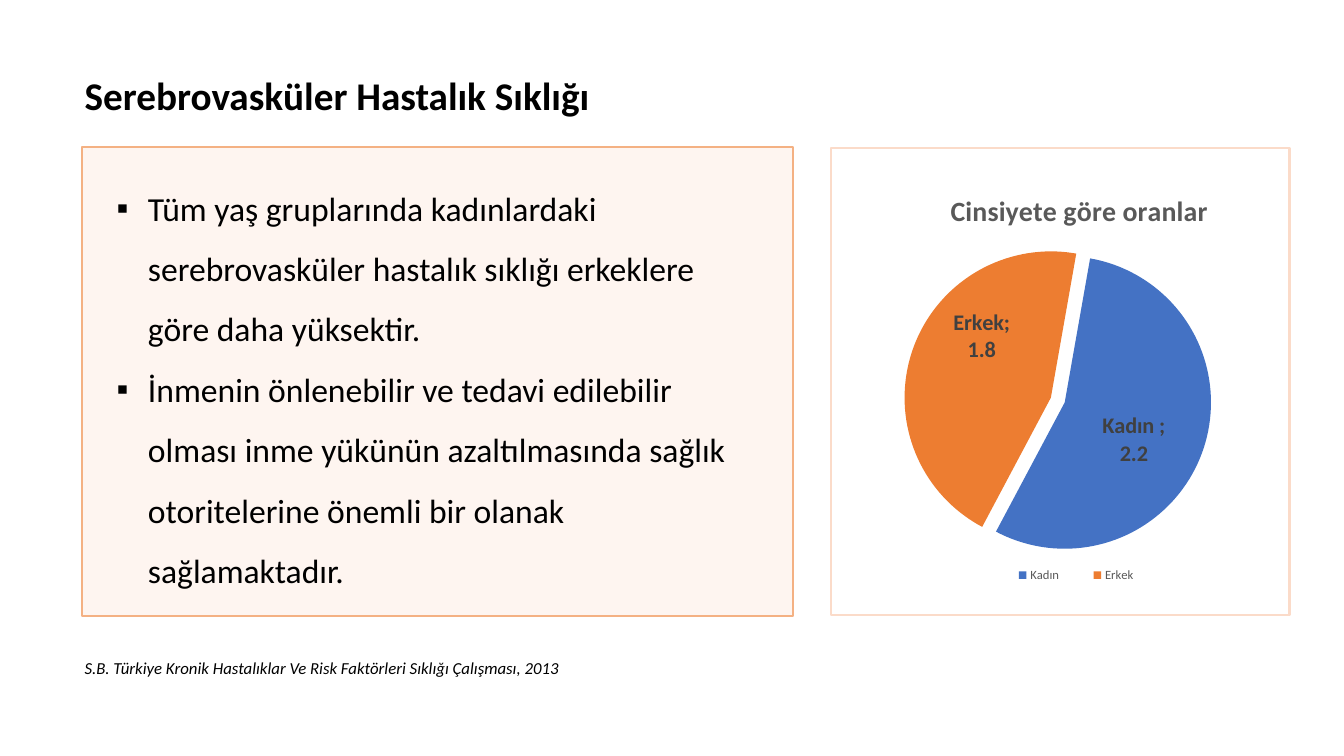
from dataclasses import dataclass

from lxml import etree
from pptx import Presentation
from pptx.chart.data import CategoryChartData
from pptx.dml.color import RGBColor
from pptx.enum.chart import XL_CHART_TYPE, XL_LABEL_POSITION, XL_LEGEND_POSITION
from pptx.enum.shapes import MSO_SHAPE
from pptx.enum.text import MSO_ANCHOR, MSO_AUTO_SIZE, PP_ALIGN
from pptx.oxml import parse_xml
from pptx.oxml.ns import nsdecls, qn
from pptx.util import Inches, Pt

PIE = XL_CHART_TYPE.PIE
LABEL_CENTER = XL_LABEL_POSITION.CENTER
LEGEND_BOTTOM = XL_LEGEND_POSITION.BOTTOM
RECTANGLE = MSO_SHAPE.RECTANGLE
TOP = MSO_ANCHOR.TOP
NO_AUTOFIT = MSO_AUTO_SIZE.NONE
LEFT = PP_ALIGN.LEFT


@dataclass(frozen=True)
class Theme:
    font: str = "Calibri"
    ink: str = "000000"
    panel: str = "FEF5F0"
    panel_line: str = "F4B183"
    chart_fill: str = "FFFFFF"
    chart_line: str = "FBDBC9"
    muted: str = "595959"
    label: str = "404040"
    women: str = "4472C4"
    men: str = "ED7D31"
    line: float = 1.5
    title_size: int = 28
    body_size: int = 24
    chart_title_size: int = 20
    label_size: int = 16
    source_size: int = 12
    legend_size: int = 9


@dataclass(frozen=True)
class Box:
    left: float
    top: float
    width: float
    height: float

    def inset(self, dx, dy):
        return Box(self.left + dx, self.top + dy, self.width - 2 * dx, self.height - 2 * dy)

    def emu(self):
        return [Inches(v) for v in (self.left, self.top, self.width, self.height)]


THEME = Theme()
WIDTH, HEIGHT = 13.33, 7.5
TEXT_LEFT, PANEL_TOP, PANEL_HEIGHT = 0.74, 1.46, 4.65
TITLE_BOX = Box(TEXT_LEFT, 0.66, 10, 0.57)
FINDINGS_BOX = Box(0.81, PANEL_TOP, 7.06, PANEL_HEIGHT)
CHART_BOX = Box(8.23, PANEL_TOP, 4.57, PANEL_HEIGHT)
SOURCE_BOX = Box(TEXT_LEFT, 6.48, 6.67, 0.3)

FINDINGS = [
    "Tüm yaş gruplarında kadınlardaki serebrovasküler hastalık sıklığı erkeklere göre daha yüksektir.",
    "İnmenin önlenebilir ve tedavi edilebilir olması inme yükünün azaltılmasında sağlık "
    "otoritelerine önemli bir olanak sağlamaktadır.",
]
RATES = [("Kadın ", 2.2, THEME.women, 0.03), ("Erkek", 1.8, THEME.men, -0.08)]


def style(font, size, color=THEME.ink, bold=False, italic=False):
    font.name = THEME.font
    font.size = Pt(size)
    font.bold = bold
    font.italic = italic
    font.color.rgb = RGBColor.from_string(color)


def chart_layout(x, y, w=None, h=None, inner=False):
    target = '<c:layoutTarget val="inner"/>' if inner else ""
    modes = '<c:xMode val="edge"/><c:yMode val="edge"/>'
    sizes = f'<c:w val="{w}"/><c:h val="{h}"/>' if w else ""
    return parse_xml(
        f'<c:layout {nsdecls("c")}><c:manualLayout>{target}{modes}'
        f'<c:x val="{x}"/><c:y val="{y}"/>{sizes}</c:manualLayout></c:layout>'
    )


def replace_layout(parent, layout, after=None):
    for old in parent.findall(qn("c:layout")):
        parent.remove(old)
    if after is None:
        parent.insert(0, layout)
    else:
        parent.find(qn(after)).addnext(layout)


def add_title(slide, box):
    title = slide.shapes.title
    title.left, title.top, title.width, title.height = box.emu()
    frame = title.text_frame
    frame.text = "Serebrovasküler Hastalık Sıklığı"
    frame.auto_size = NO_AUTOFIT
    frame.vertical_anchor = TOP
    paragraph = frame.paragraphs[0]
    paragraph.alignment = LEFT
    paragraph.line_spacing = 1.0
    style(paragraph.runs[0].font, THEME.title_size, bold=True)


def add_findings(slide, box):
    group = slide.shapes.add_group_shape()
    panel = group.shapes.add_shape(RECTANGLE, *box.emu())
    panel.shadow.inherit = False
    panel.fill.solid()
    panel.fill.fore_color.rgb = RGBColor.from_string(THEME.panel)
    panel.line.color.rgb = RGBColor.from_string(THEME.panel_line)
    panel.line.width = Pt(THEME.line)

    frame = group.shapes.add_textbox(*box.inset(0.25, 0.15).emu()).text_frame
    frame.word_wrap = True
    frame.text = "\n".join(FINDINGS)
    for paragraph in frame.paragraphs:
        paragraph.line_spacing = 1.5
        properties = paragraph._p.get_or_add_pPr()
        properties.set("marL", str(Inches(0.31)))
        properties.set("indent", str(Inches(-0.31)))
        etree.SubElement(properties, qn("a:buFont")).set("typeface", "Arial")
        etree.SubElement(properties, qn("a:buChar")).set("char", "▪")
        style(paragraph.runs[0].font, THEME.body_size)


def format_slices(series):
    for index, (_, _, color, shift) in enumerate(RATES):
        point = series.points[index]
        point.format.fill.solid()
        point.format.fill.fore_color.rgb = RGBColor.from_string(color)
        label = point.data_label
        style(label.font, THEME.label_size, THEME.label, bold=True)
        label.position = LABEL_CENTER
        element = series._element.findall(".//" + qn("c:dLbl"))[index]
        element.find(qn("c:showCatName")).set("val", "1")
        etree.SubElement(element, qn("c:separator")).text = ";\n"
        offset = parse_xml(
            f'<c:layout {nsdecls("c")}><c:manualLayout><c:x val="0"/>'
            f'<c:y val="{shift}"/></c:manualLayout></c:layout>'
        )
        replace_layout(element, offset, "c:idx")
    explosion = parse_xml(f'<c:explosion {nsdecls("c")} val="5"/>')
    series._element.find(qn("c:dPt")).addprevious(explosion)


def add_rates_chart(slide, box):
    data = CategoryChartData()
    data.categories = [rate[0] for rate in RATES]
    data.add_series("Series 1", [rate[1] for rate in RATES])
    chart = slide.shapes.add_chart(PIE, *box.emu(), data).chart
    style(chart.font, 10)

    chart.has_title = True
    heading = chart.chart_title.text_frame
    heading.text = "Cinsiyete göre oranlar"
    style(heading.paragraphs[0].runs[0].font, THEME.chart_title_size, THEME.muted, bold=True)
    replace_layout(chart.chart_title._element, chart_layout(0.25, 0.08), "c:tx")

    chart.has_legend = True
    legend = chart.legend
    legend.position = LEGEND_BOTTOM
    legend.include_in_layout = False
    style(legend.font, THEME.legend_size, THEME.muted)
    replace_layout(legend._element, chart_layout(0.35, 0.89, 0.37, 0.05), "c:legendPos")

    plot = chart.plots[0]
    plot.vary_by_categories = True
    format_slices(plot.series[0])
    pie = plot._element
    for old in pie.findall(qn("c:firstSliceAng")):
        pie.remove(old)
    etree.SubElement(pie, qn("c:firstSliceAng")).set("val", "10")
    replace_layout(pie.getparent(), chart_layout(0.16, 0.21, 0.67, 0.66, inner=True))

    frame = parse_xml(
        f'<c:spPr {nsdecls("c", "a")}><a:solidFill><a:srgbClr val="{THEME.chart_fill}"/></a:solidFill>'
        f'<a:ln w="{Pt(THEME.line)}"><a:solidFill><a:srgbClr val="{THEME.chart_line}"/>'
        "</a:solidFill></a:ln></c:spPr>"
    )
    chart._chartSpace.find(qn("c:chart")).addnext(frame)


def add_source(slide, box):
    frame = slide.shapes.add_textbox(*box.emu()).text_frame
    frame.word_wrap = True
    frame.text = "S.B. Türkiye Kronik Hastalıklar Ve Risk Faktörleri Sıklığı Çalışması, 2013"
    style(frame.paragraphs[0].runs[0].font, THEME.source_size, italic=True)


def main():
    deck = Presentation()
    deck.slide_width, deck.slide_height = Inches(WIDTH), Inches(HEIGHT)
    slide = deck.slides.add_slide(deck.slide_layouts[5])
    add_title(slide, TITLE_BOX)
    add_findings(slide, FINDINGS_BOX)
    add_rates_chart(slide, CHART_BOX)
    add_source(slide, SOURCE_BOX)
    deck.save("out.pptx")


if __name__ == "__main__":
    main()
